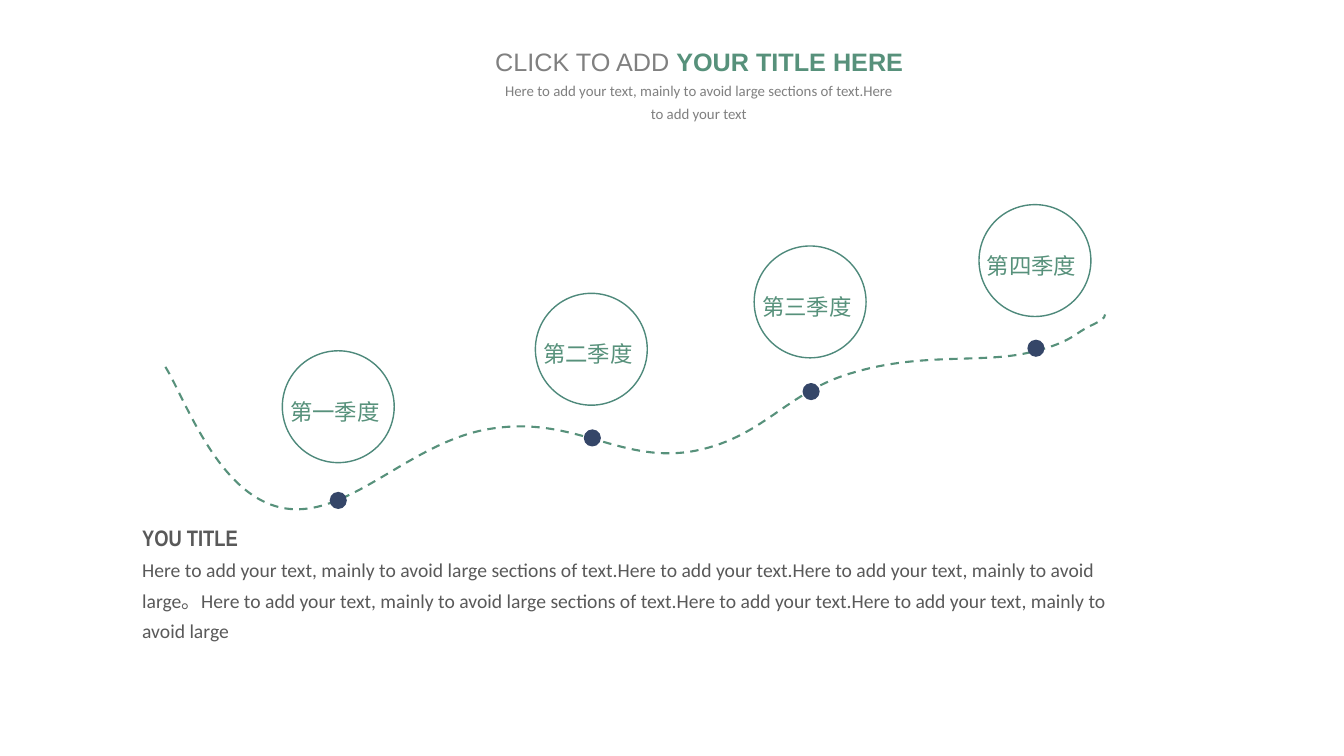
"""Build the quarterly roadmap slide with four milestones along a dashed curve."""
from lxml import etree
from pptx import Presentation
from pptx.dml.color import RGBColor
from pptx.enum.dml import MSO_LINE
from pptx.enum.shapes import MSO_SHAPE
from pptx.enum.text import MSO_ANCHOR, MSO_AUTO_SIZE, PP_ALIGN
from pptx.oxml.ns import qn
from pptx.util import Inches, Pt

COLORS = {"green": "57917B", "ring": "4E897B", "navy": "354668",
          "gray": "808080", "dark": "595959"}
CJK = "Noto Sans CJK JP"
BODY = "Here to add your text, mainly to avoid large"


def rgb(name):
    return RGBColor.from_string(COLORS[name])


def add_run(p, text, size, font, color, bold=False):
    r = p.add_run()
    r.text = text
    r.font.size = Pt(size)
    r.font.name = font
    r.font.bold = bold
    r.font.color.rgb = rgb(color)
    if font == CJK:
        etree.SubElement(r.font._element, qn("a:ea"), typeface=font)


prs = Presentation()
prs.slide_width, prs.slide_height = Inches(13.33), Inches(7.5)
s = prs.slides.add_slide(prs.slide_layouts[5])

start = (1.64, 3.64)
curves = [
    [(1.83, 3.94), (2.16, 4.92), (2.81, 5.04)],
    [(3.46, 5.16), (4.08, 4.36), (4.89, 4.25)],
    [(5.7, 4.13), (6.14, 4.59), (6.85, 4.48)],
    [(7.56, 4.36), (7.79, 3.89), (8.45, 3.7)],
    [(9.11, 3.5), (9.68, 3.6), (10.15, 3.51)],
    [(10.63, 3.41), (10.66, 3.3), (10.82, 3.23)],
    [(10.99, 3.15), (10.95, 3.13), (10.96, 3.12)],
]
anchors = [start] + [curve[-1] for curve in curves]
left, top = min(x for x, y in anchors), min(y for x, y in anchors)
fb = s.shapes.build_freeform(round(start[0] * 1000), round(start[1] * 1000),
                             scale=Inches(1) / 1000)
fb.add_line_segments([(round(x * 1000), round(y * 1000)) for x, y in anchors[1:]],
                     close=False)
road = fb.convert_to_shape()
road.shadow.inherit = False
road.fill.background()
road.line.color.rgb = rgb("green")
road.line.width = Pt(1.5)
road.line.dash_style = MSO_LINE.DASH
for segment, curve in zip(list(road._element.iter(qn("a:lnTo"))), curves):
    bezier = etree.Element(qn("a:cubicBezTo"))
    for x, y in curve:
        etree.SubElement(bezier, qn("a:pt"), x=str(round((x - left) * 1000)),
                         y=str(round((y - top) * 1000)))
    segment.getparent().replace(segment, bezier)

milestones = [
    ("第一季度", 2.8, 3.48, 3.27, 4.88),
    ("第二季度", 5.31, 2.91, 5.79, 4.26),
    ("第三季度", 7.48, 2.44, 7.96, 3.8),
    ("第四季度", 9.71, 2.03, 10.19, 3.37),
]
for label, x, y, dot_x, dot_y in milestones:
    dot = s.shapes.add_shape(MSO_SHAPE.OVAL, Inches(dot_x), Inches(dot_y),
                             Inches(0.17), Inches(0.17))
    dot.shadow.inherit = False
    dot.fill.solid()
    dot.fill.fore_color.rgb = rgb("navy")
    dot.line.fill.background()

    group = s.shapes.add_group_shape()
    ring = group.shapes.add_shape(MSO_SHAPE.OVAL, Inches(x), Inches(y),
                                  Inches(1.11), Inches(1.11))
    ring.shadow.inherit = False
    ring.fill.background()
    ring.line.color.rgb = rgb("ring")
    ring.line.width = Pt(1)
    tb = group.shapes.add_textbox(Inches(x - 0.02), Inches(y + 0.42),
                                  Inches(1.42), Inches(0.37))
    tf = tb.text_frame
    tf.word_wrap = True
    tf.auto_size = MSO_AUTO_SIZE.SHAPE_TO_FIT_TEXT
    add_run(tf.paragraphs[0], label, 16, CJK, "green")

tb = s.shapes.add_textbox(Inches(1.41), Inches(5.2), Inches(9.75), Inches(1.4))
tf = tb.text_frame
tf.word_wrap = True
tf.auto_size = MSO_AUTO_SIZE.SHAPE_TO_FIT_TEXT
tf.margin_left = tf.margin_top = tf.margin_right = tf.margin_bottom = 0
add_run(tf.paragraphs[0], "YOU TITLE", 16, "Arial Narrow", "dark", True)
p = tf.add_paragraph()
p.line_spacing = 1.3
sentence = f"{BODY} sections of text.Here to add your text.{BODY}"
add_run(p, f"{sentence}。{sentence}", 14, "Calibri", "dark")

title = s.shapes.title
title.left, title.top = Inches(4.81), Inches(0.41)
title.width, title.height = Inches(4.25), Inches(0.4)
tf = title.text_frame
tf.word_wrap = False
tf.auto_size = MSO_AUTO_SIZE.SHAPE_TO_FIT_TEXT
tf.vertical_anchor = MSO_ANCHOR.TOP
p = tf.paragraphs[0]
p.alignment = PP_ALIGN.CENTER
add_run(p, "CLICK TO ADD ", 18, "Arial", "gray")
add_run(p, "YOUR TITLE HERE", 18, "Arial", "green", True)

tb = s.shapes.add_textbox(Inches(4.88), Inches(0.71), Inches(4.1), Inches(0.56))
tf = tb.text_frame
tf.word_wrap = True
tf.auto_size = MSO_AUTO_SIZE.SHAPE_TO_FIT_TEXT
p = tf.paragraphs[0]
p.alignment = PP_ALIGN.CENTER
p.line_spacing = 1.3
add_run(p, f"{BODY} sections of text.Here to add your text", 10.6, "Calibri", "gray")

prs.save("out.pptx")
